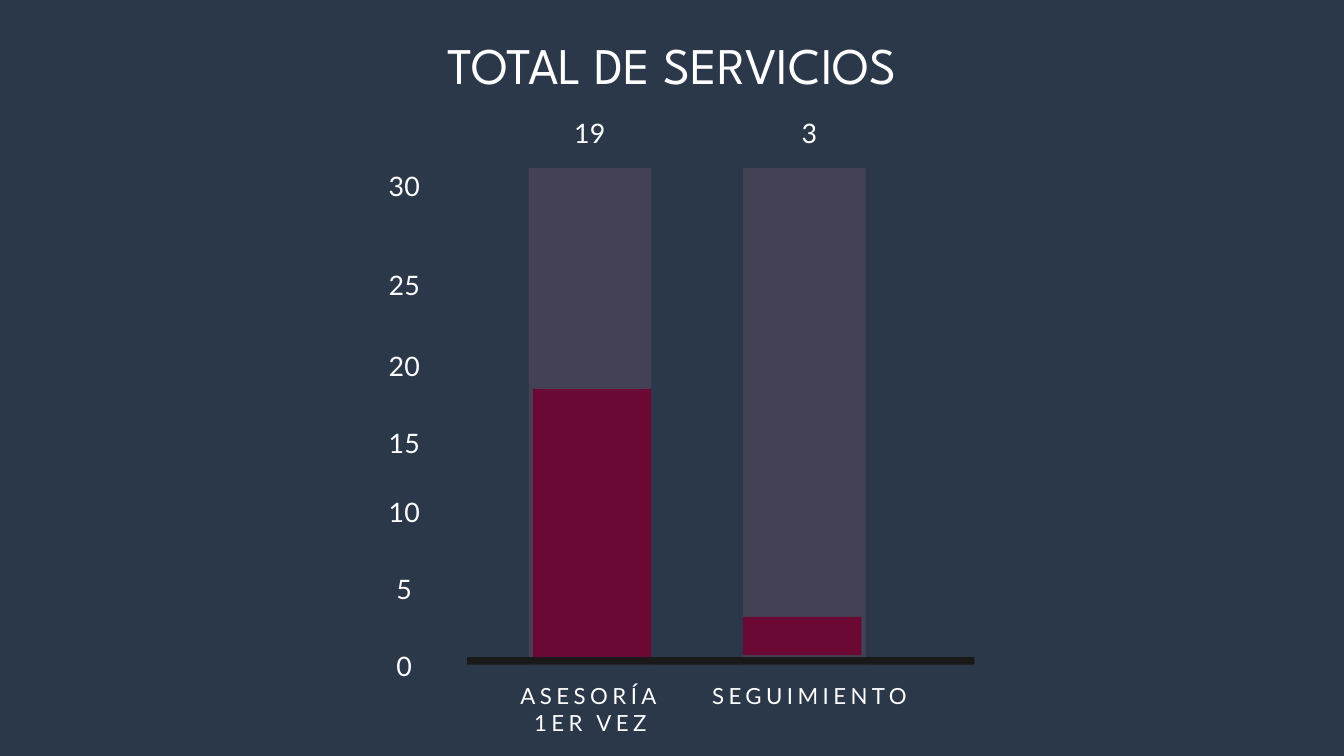
import pptx
import pptx.dml.color
import pptx.enum.shapes
import pptx.enum.text
import pptx.oxml
import pptx.oxml.ns
import pptx.util

EMU_PER_PX = 9144
WHITE = "FFFEFE"
TITLE = {"name": "League Spartan", "size": 55, "line": 77, "spacing": 0, "color": "FFFFFF"}
NUMBER = {"name": "Lato", "size": 28.7, "line": 43.9, "spacing": 30, "color": WHITE}
CATEGORY = {"name": "Lato", "size": 23.8, "line": 29, "spacing": 480, "color": WHITE}
TICKS = [("30", 0), ("25", 147), ("20", 267), ("15", 382), ("10", 484), ("5", 599), ("0", 714)]
BARS = [
    {"box": (787, 250, 182, 739), "fill": (6, 329, 176, 408),
     "value": ("19", 42), "category": ("ASESORÍA 1ER VEZ", -33, 249, 79)},
    {"box": (1106, 250, 182, 739), "fill": (0, 668, 176, 57),
     "value": ("3", 50), "category": ("SEGUIMIENTO", -85, 367, 40)},
]


def px(length):
    """Turn px into EMU."""
    return pptx.util.Emu(int(length * EMU_PER_PX))


def paint(fill, color, alpha=100):
    """Fill with a hex colour at an opacity in percent."""
    fill.solid()
    fill.fore_color.rgb = pptx.dml.color.RGBColor.from_string(color)
    if alpha < 100:
        color_node = fill._xPr.find(".//" + pptx.oxml.ns.qn("a:srgbClr"))
        alpha_node = pptx.oxml.parse_xml(
            f'<a:alpha {pptx.oxml.ns.nsdecls("a")} val="{alpha * 1000}"/>')
        color_node.append(alpha_node)


def add_text(slide, box, text, style):
    """Place one centred text in a box."""
    shape = slide.shapes.add_textbox(*map(px, box))
    frame = shape.text_frame
    frame_format = {
        "word_wrap": True,
        "auto_size": pptx.enum.text.MSO_AUTO_SIZE.SHAPE_TO_FIT_TEXT,
        **dict.fromkeys(("margin_left", "margin_top", "margin_right", "margin_bottom"), 0),
    }
    for name, value in frame_format.items():
        setattr(frame, name, value)
    paragraph = frame.paragraphs[0]
    paragraph.alignment = pptx.enum.text.PP_ALIGN.CENTER
    paragraph.line_spacing = pptx.util.Pt(style["line"])
    run = paragraph.add_run()
    run.text = text
    font_format = {"name": style["name"], "size": pptx.util.Pt(style["size"])}
    for name, value in font_format.items():
        setattr(run.font, name, value)
    paint(run.font.fill, style["color"])
    run._r.get_or_add_rPr().set("spc", str(style["spacing"]))


def add_rectangle(slide, box, color, alpha=100):
    """Place a plain rectangle without line or shadow."""
    shape = slide.shapes.add_shape(
        pptx.enum.shapes.MSO_SHAPE.RECTANGLE, *map(px, box))
    shape.shadow.inherit = False
    shape.line.fill.background()
    paint(shape.fill, color, alpha)


def add_scale(slide, box):
    """Place the scale numbers down a box."""
    left, top, width, height = box
    for text, offset in TICKS:
        add_text(slide, (left, top + offset, width, height), text, NUMBER)


def add_bar(slide, bar):
    """Place a bar's track, filled part, value and category."""
    left, top, width, height = bar["box"]
    fill_left, fill_top, fill_width, fill_height = bar["fill"]
    value, value_left = bar["value"]
    category, category_left, category_width, category_height = bar["category"]
    add_rectangle(slide, bar["box"], "9C617B", 23)
    add_rectangle(slide, (left + fill_left, top + fill_top, fill_width, fill_height), "6B0834")
    add_text(slide, (left + value_left, top - 90, 97, 57), value, NUMBER)
    add_text(slide, (left + category_left, top + height + 26, category_width, category_height),
             category, CATEGORY)


def main():
    """Build and save the slide."""
    presentation = pptx.Presentation()
    presentation.slide_width = px(2000)
    presentation.slide_height = px(1125)
    slide = presentation.slides.add_slide(presentation.slide_layouts[6])
    paint(slide.background.fill, "2B3849")
    add_text(slide, (249, 34, 1502, 101), "TOTAL DE SERVICIOS", TITLE)
    add_scale(slide, (553, 240, 97, 57))
    for bar in BARS:
        add_bar(slide, bar)
    add_rectangle(slide, (695, 978, 755, 11), "191919")
    presentation.save("out.pptx")


if __name__ == "__main__":
    main()
